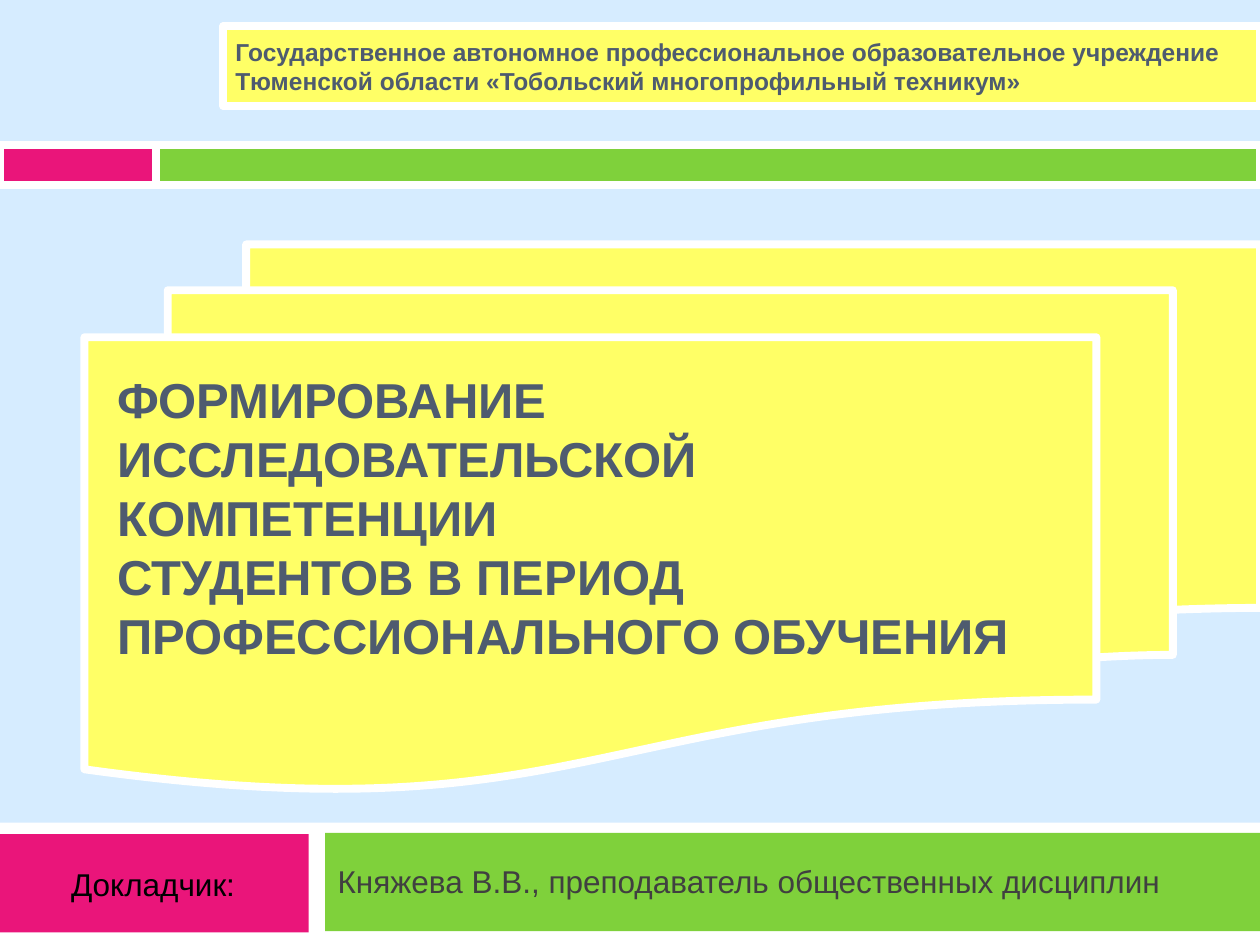
from pptx import Presentation
from pptx.dml.color import RGBColor
from pptx.enum import shapes, text
from pptx.util import Inches, Pt

COLORS = {
    "sky": "D6ECFF", "white": "FFFFFF", "pink": "EA157A", "green": "7FD13B",
    "yellow": "FFFF66", "slate": "4E5B6F", "gray": "404040", "black": "000000",
}
RECTANGLE = shapes.MSO_SHAPE.RECTANGLE


def color(name):
    return RGBColor.from_string(COLORS[name])


def write(shape, content, size, ink, bold=False, align=text.PP_ALIGN.LEFT,
          anchor=text.MSO_ANCHOR.MIDDLE, before=0):
    frame = shape.text_frame
    frame.word_wrap = True
    frame.auto_size = text.MSO_AUTO_SIZE.NONE
    frame.vertical_anchor = anchor
    frame.text = content
    paragraph = frame.paragraphs[0]
    paragraph.alignment = align
    paragraph.space_before = Pt(before)
    for run in paragraph.runs:
        run.font.name = "Arial"
        run.font.size = Pt(size)
        run.font.bold = bold
        run.font.color.rgb = color(ink)


class SlideBuilder:
    outline_width = 4.5

    def __init__(self, slide):
        self.slide = slide
        slide.background.fill.solid()
        slide.background.fill.fore_color.rgb = color("sky")

    def block(self, left, top, width, height, fill, kind=RECTANGLE, outlined=False):
        shape = self.slide.shapes.add_shape(
            kind, Inches(left), Inches(top), Inches(width), Inches(height))
        shape.shadow.inherit = False
        shape.fill.solid()
        shape.fill.fore_color.rgb = color(fill)
        if outlined:
            shape.line.color.rgb = color("white")
            shape.line.width = Pt(self.outline_width)
        else:
            shape.line.fill.background()
        return shape

    def label(self, left, top, width, height):
        return self.slide.shapes.add_textbox(
            Inches(left), Inches(top), Inches(width), Inches(height))

    def placeholder(self, index, left, top, width, height):
        """Place a template placeholder in front of everything drawn so far."""
        shape = self.slide.placeholders[index]
        shape.left, shape.top = Inches(left), Inches(top)
        shape.width, shape.height = Inches(width), Inches(height)
        self.slide.shapes._spTree.append(shape._element)
        return shape


def main():
    presentation = Presentation()
    presentation.slide_width = Inches(10)
    presentation.slide_height = Inches(7.5)
    builder = SlideBuilder(presentation.slides.add_slide(presentation.slide_layouts[0]))

    # Footer band with the speaker
    builder.block(0, 6.53, 10, 0.97, "white")
    builder.block(-0.01, 6.62, 2.46, 0.78, "pink")
    builder.block(2.58, 6.61, 7.42, 0.78, "green")
    speaker = builder.placeholder(1, 2.58, 6.62, 7.33, 0.75)
    write(speaker, "Княжева В.В., преподаватель общественных дисциплин",
          size=18, ink="gray", before=7)
    speaker_label = builder.label(0.27, 6.82, 1.89, 0.4)
    write(speaker_label, "Докладчик:", size=18, ink="black", before=7,
          align=text.PP_ALIGN.CENTER, anchor=text.MSO_ANCHOR.TOP)

    # Divider under the header
    builder.block(1.08, 1.15, 8.92, 0.32, "green", outlined=True)
    builder.block(0, 1.15, 1.24, 0.32, "pink", outlined=True)

    # Institution
    institution = builder.block(1.77, 0.21, 8.23, 0.63, "yellow", outlined=True)
    write(institution,
          "Государственное автономное профессиональное образовательное учреждение "
          "Тюменской области «Тобольский многопрофильный техникум»",
          size=14, ink="slate", bold=True)

    # Stacked pages with the title
    builder.block(0.67, 1.94, 9.33, 4.33, "yellow", outlined=True,
                  kind=shapes.MSO_SHAPE.FLOWCHART_MULTIDOCUMENT)
    title = builder.placeholder(0, 0.83, 2.96, 7.72, 2.36)
    title.fill.solid()
    title.fill.fore_color.rgb = color("yellow")
    write(title,
          "ФОРМИРОВАНИЕ ИССЛЕДОВАТЕЛЬСКОЙ КОМПЕТЕНЦИИ\v"
          "СТУДЕНТОВ В ПЕРИОД ПРОФЕССИОНАЛЬНОГО ОБУЧЕНИЯ",
          size=28, ink="slate", bold=True, anchor=text.MSO_ANCHOR.BOTTOM)

    presentation.save("out.pptx")


if __name__ == "__main__":
    main()
